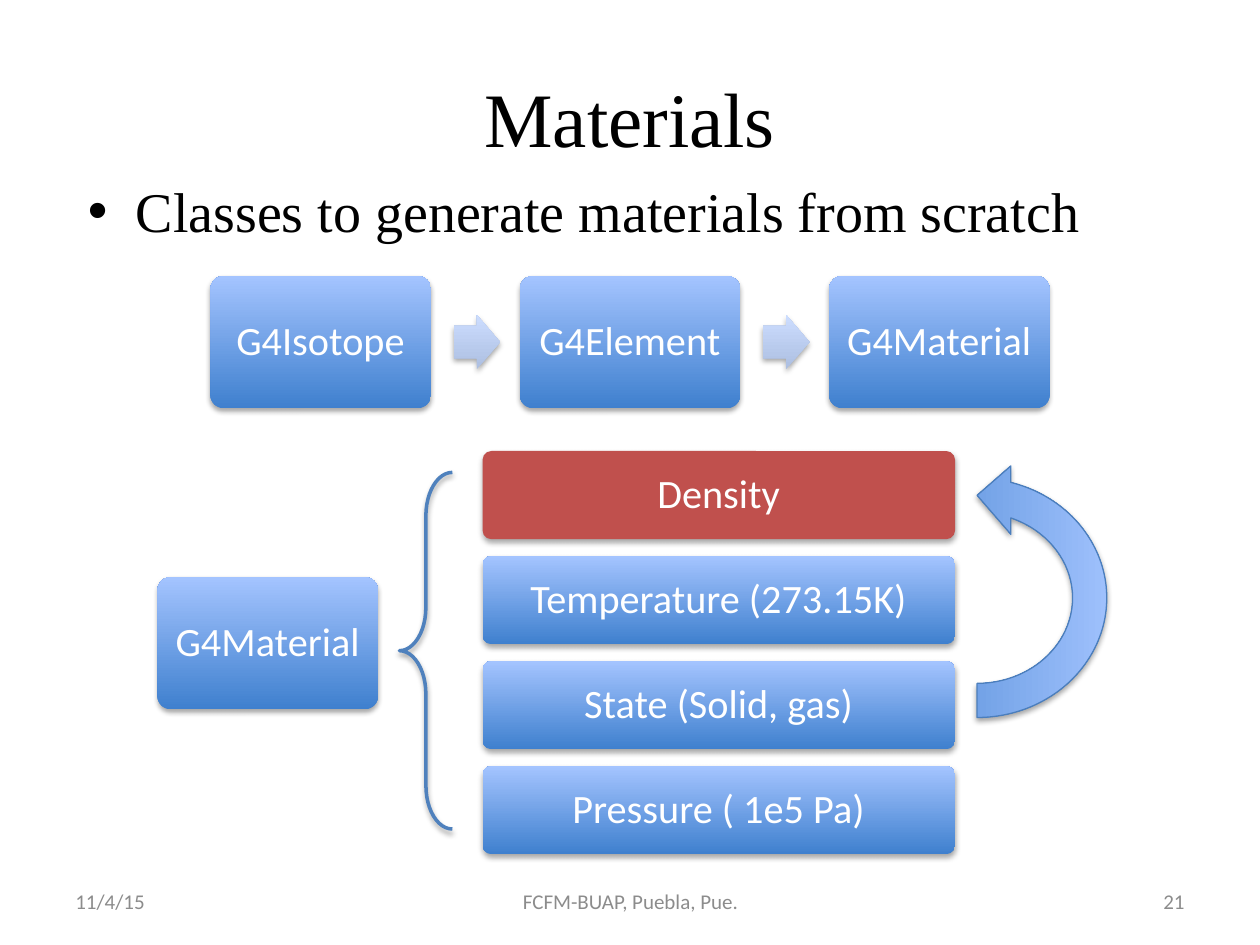
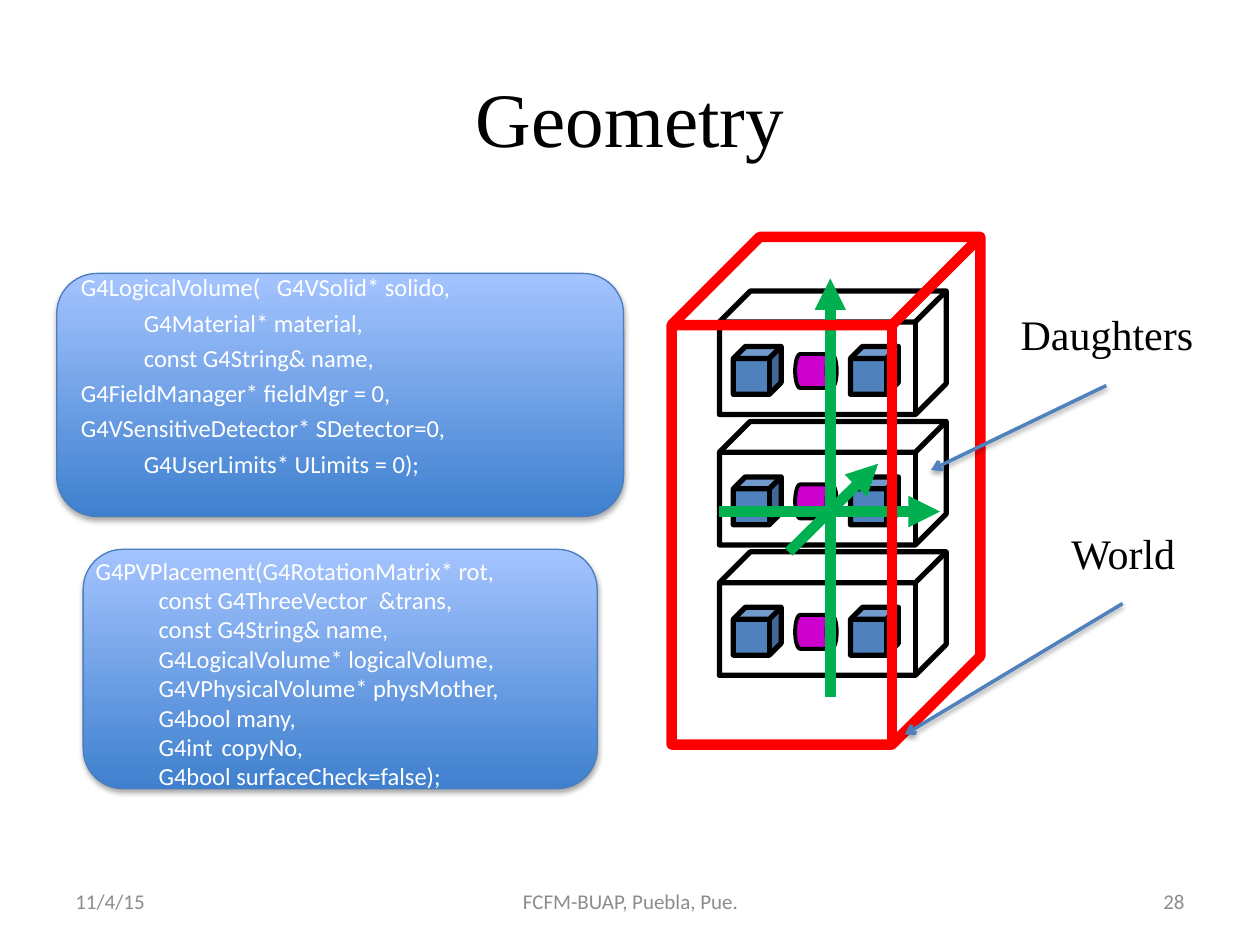
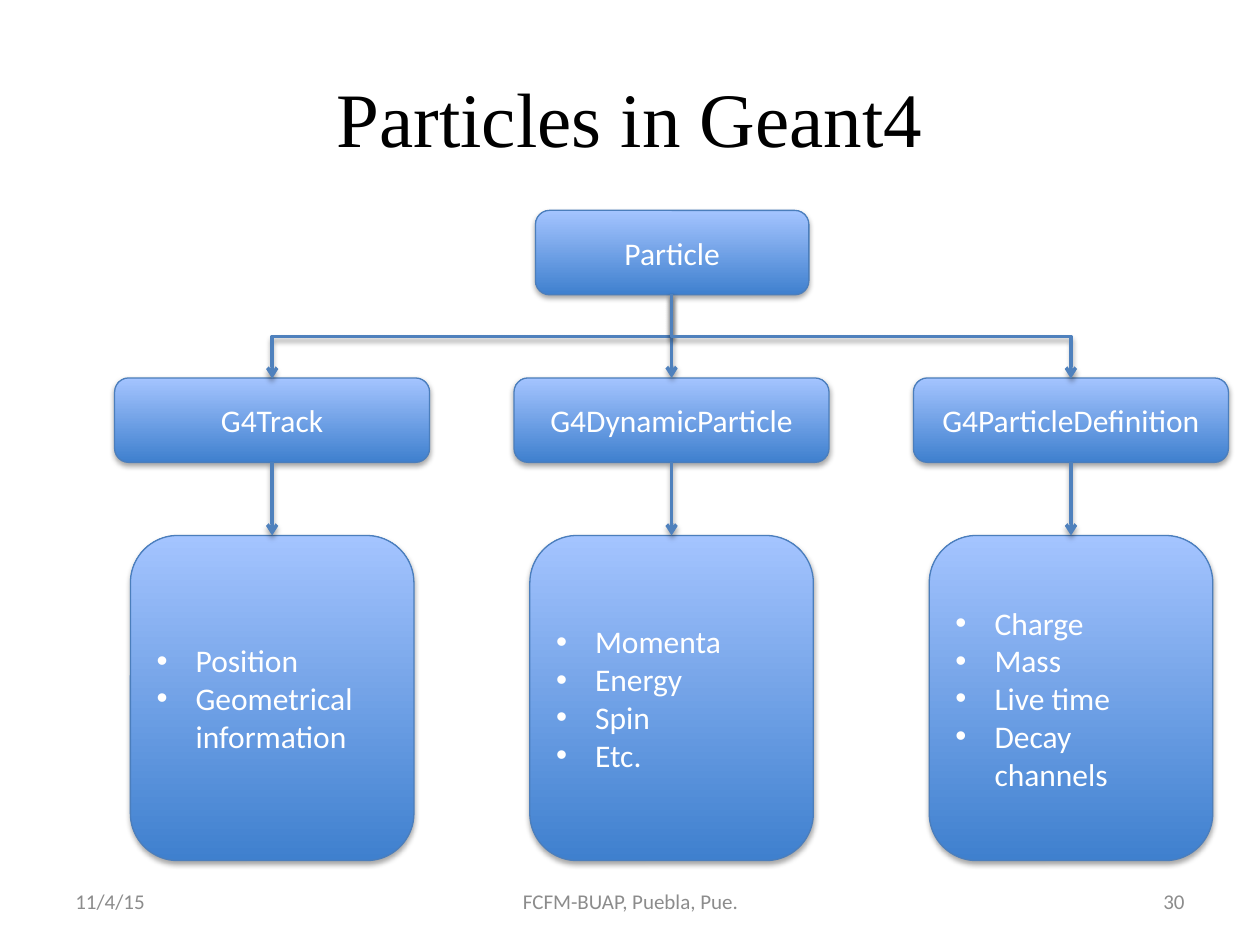
"""Build three slides on Geant4 materials, geometry and particles."""
from lxml import etree
from pptx import Presentation, util as u
from pptx.dml.color import RGBColor
from pptx.enum import shapes, text
from pptx.oxml import parse_xml
from pptx.oxml.ns import nsdecls, qn

C = {"deep": "3F80CE", "sky": "A4C4FF", "mist_deep": "ADBFE1", "mist": "CCDDFF",
     "edge": "4B7EBC", "blue": "4F81BD", "red": "C0504D", "world": "FF0000",
     "axis": "00B050", "can": "CC00CC", "black": "000000", "white": "FFFFFF",
     "grey": "8C8C8C"}
SERIF, SANS = "Times New Roman", "Calibri"
BLUE, MIST = ("deep", "sky"), ("mist_deep", "mist")
G, A, V = shapes.MSO_SHAPE, text.PP_ALIGN, text.MSO_ANCHOR
LINK = shapes.MSO_CONNECTOR
SHADOW = ('<a:effectLst %s><a:outerShdw blurRad="39400" dist="22900" dir="5400000" rotWithShape="0">'
          '<a:srgbClr val="000000"><a:alpha val="35000"/></a:srgbClr></a:outerShdw></a:effectLst>'
          % nsdecls("a"))
PLAIN = "<a:effectLst %s/>" % nsdecls("a")


def add(s, kind, box, fill=None, line=None, width=0.75, shadow=False, adj=(), rows=(), size=18,
        font=SANS, color="white", align=A.CENTER, anchor=V.MIDDLE, spacing=None, indent=0):
    """Add a preset shape, or a text box when kind is None, with its paragraphs."""
    box = [u.Inches(v) for v in box]
    if kind is None:
        sp = s.shapes.add_textbox(*box)
    else:
        sp = s.shapes.add_shape(kind, *box)
        for i, value in enumerate(adj):
            sp.adjustments[i] = value
        if isinstance(fill, tuple):
            sp.fill.gradient()
            sp.fill.gradient_angle = 90
            for stop, name in zip(sp.fill.gradient_stops, fill):
                stop.color.rgb = RGBColor.from_string(C[name])
        elif fill:
            sp.fill.solid()
            sp.fill.fore_color.rgb = RGBColor.from_string(C[fill])
        else:
            sp.fill.background()
        if line:
            sp.line.color.rgb = RGBColor.from_string(C[line])
            sp.line.width = u.Pt(width)
        else:
            sp.line.fill.background()
        sp._element.spPr.append(parse_xml(SHADOW if shadow else PLAIN))
    tf = sp.text_frame
    tf.word_wrap = True
    tf.vertical_anchor = anchor
    for i, row in enumerate(rows):
        p = tf.paragraphs[0] if i == 0 else tf.add_paragraph()
        if indent:
            pPr = p._p.get_or_add_pPr()
            pPr.set("marL", str(u.Inches(indent)))
            pPr.set("indent", str(-u.Inches(indent)))
            etree.SubElement(pPr, qn("a:buFont")).set("typeface", "Arial")
            etree.SubElement(pPr, qn("a:buChar")).set("char", "•")
        p.alignment = align
        if spacing:
            p.line_spacing = spacing
        r = p.add_run()
        r.text = row
        r.font.name, r.font.size = font, u.Pt(size)
        r.font.color.rgb = RGBColor.from_string(C[color])
    return sp


def arrow(s, ends, color="blue", width=2, head="arrow", kind=LINK.STRAIGHT, rot=0):
    """Add a connector with an arrowhead at its end."""
    cx = s.shapes.add_connector(kind, *[u.Inches(v) for v in ends])
    cx.line.color.rgb = RGBColor.from_string(C[color])
    cx.line.width = u.Pt(width)
    spPr = cx._element.spPr
    etree.SubElement(spPr.find(qn("a:ln")), qn("a:tailEnd")).set("type", head)
    spPr.append(parse_xml(SHADOW if color == "blue" else PLAIN))
    if rot:
        spPr.find(qn("a:xfrm")).set("rot", str(rot * 60000))


prs = Presentation()
prs.slide_width, prs.slide_height = u.Inches(10), u.Inches(7.5)
slides = []
for title, number in (("Materials", "21"), ("Geometry", "28"), ("Particles in Geant4", "30")):
    s = prs.slides.add_slide(prs.slide_layouts[5])
    sp = s.shapes.title
    sp.left, sp.top, sp.width, sp.height = [u.Inches(v) for v in (0.5, 0.3, 9, 1.25)]
    tf = sp.text_frame
    tf.vertical_anchor = V.MIDDLE
    p = tf.paragraphs[0]
    p.alignment = A.CENTER
    r = p.add_run()
    r.text = title
    r.font.name, r.font.size = SERIF, u.Pt(44)
    r.font.color.rgb = RGBColor.from_string(C["black"])
    for x, w, label, align in ((0.5, 2.33, "11/4/15", A.LEFT),
                               (3.42, 3.17, "FCFM-BUAP, Puebla, Pue.", A.CENTER),
                               (7.17, 2.33, number, A.RIGHT)):
        add(s, None, (x, 6.95, w, 0.4), rows=[label], size=12, color="grey", align=align)
    slides.append(s)
materials, geometry, particles = slides

s = materials
add(s, None, (0.6, 1.35, 9, 0.65), rows=["Classes to generate materials from scratch"], size=32,
    font=SERIF, color="black", align=A.LEFT, anchor=V.TOP, indent=0.38)
block = dict(shadow=True, adj=[0.1], size=23, spacing=0.9)
STEP = 2.455
for i, name in enumerate(("G4Isotope", "G4Element", "G4Material")):
    x = 1.67 + i * STEP
    add(s, G.ROUNDED_RECTANGLE, (x, 2.19, 1.75, 1.05), BLUE, rows=[name], **block)
    if i < 2:
        add(s, G.RIGHT_ARROW, (x + 1.93, 2.5, 0.37, 0.43), MIST, shadow=True, adj=(0.6, 0.5))
add(s, G.ROUNDED_RECTANGLE, (1.25, 4.58, 1.75, 1.05), BLUE, rows=["G4Material"], **block)
properties = ("Density", "Temperature (273.15K)", "State (Solid, gas)", "Pressure ( 1e5 Pa)")
for i, name in enumerate(properties):
    add(s, G.ROUNDED_RECTANGLE, (3.83, 3.58 + i * 2.5 / 3, 3.75, 0.7), BLUE if i else "red",
        rows=[name], **block)
sp = add(s, G.CIRCULAR_ARROW, (6.67, 3.58, 2.17, 2.33), BLUE, "edge", shadow=True)
sp.rotation = 90
sp._element.spPr.find(qn("a:xfrm")).set("flipH", "1")
add(s, G.LEFT_BRACE, (3.17, 3.75, 0.42, 2.83), line="blue", width=2, shadow=True, adj=(0.82, 0.5))

s = geometry
panel = dict(fill=BLUE, line="edge", shadow=True)
sp = add(s, G.ROUNDED_RECTANGLE, (0.45, 2.17, 4.5, 1.93), size=14, align=A.LEFT, spacing=1.2, rows=[
    "G4LogicalVolume(   G4VSolid* solido,",
    "\tG4Material* material,",
    "\tconst G4String& name, \t\t\tG4FieldManager* fieldMgr = 0, \t\tG4VSensitiveDetector* SDetector=0,",
    "\tG4UserLimits* ULimits = 0);"], **panel)
sp.text_frame.margin_bottom = u.Inches(0.41)
add(s, G.ROUNDED_RECTANGLE, (0.66, 4.36, 4.08, 1.9), **panel)
add(s, None, (0.66, 4.36, 4.08, 1.99), size=14, align=A.LEFT, anchor=V.TOP, rows=[
    "G4PVPlacement(G4RotationMatrix* rot,",
    "\tconst G4ThreeVector  &trans,",
    "\tconst G4String& name,",
    "\tG4LogicalVolume* logicalVolume,",
    "\tG4VPhysicalVolume* physMother,",
    "\tG4bool many,",
    "\tG4int\tcopyNo,",
    "\tG4bool surfaceCheck=false);"])
for row in (2, 0, 1):
    y = 2.31 + row * 1.035
    add(s, G.CUBE, (5.82, y + 0.44, 0.38, 0.38), "blue", "black", 3)
    add(s, G.CUBE, (5.71, y, 1.8, 0.98), None, "black", 3)
    add(s, G.CAN, (6.34, y + 0.47, 0.27, 0.33), "can", "black", 2.25, adj=[0.3]).rotation = 90
    add(s, G.CUBE, (6.75, y + 0.44, 0.38, 0.38), "blue", "black", 3)
for ends in ((5.71, 4.06, 7.46, 4.06), (6.26, 4.38, 6.97, 3.68), (6.59, 5.53, 6.59, 2.21)):
    arrow(s, ends, "axis", 6, "triangle")
add(s, G.CUBE, (5.33, 1.88, 2.45, 4.03), None, "world", 6, adj=[0.286])
for name, x, y, ends in (("World", 8.04, 3.98, (8.91, 4.79, 7.18, 5.83)),
                         ("Daughters", 7.91, 2.24, (8.78, 3.06, 7.39, 3.73))):
    add(s, None, (x, y, 1.75, 0.82), rows=[name], size=24, font=SERIF, color="black")
    arrow(s, ends)

s = particles
MID, PITCH, DROP = 5.33, 3.17, 0.67
add(s, G.ROUNDED_RECTANGLE, (MID - 1.08, 1.67, 2.17, DROP), rows=["Particle"], **panel)
branches = (("G4Track", ["Position", "Geometrical information"]),
            ("G4DynamicParticle", ["Momenta", "Energy", "Spin", "Etc."]),
            ("G4ParticleDefinition", ["Charge", "Mass", "Live time", "Decay channels"]))
for i, (name, details) in enumerate(branches):
    side = i - 1
    x = MID + side * PITCH
    add(s, G.ROUNDED_RECTANGLE, (x - 1.25, 3, 2.5, DROP), rows=[name], **panel)
    add(s, G.ROUNDED_RECTANGLE, (x - 1.125, 4.25, 2.25, 2.58), rows=details, align=A.LEFT,
        indent=0.31, **panel)
    if side:
        cx, half = (MID + x) / 2, side * DROP / 2
        arrow(s, (cx + half, 2.67 - PITCH / 2, cx - half, 2.67 + PITCH / 2), kind=LINK.ELBOW,
              rot=270 if side > 0 else 90)
    else:
        arrow(s, (x, 2.33, x, 3))
    arrow(s, (x, 3.67, x, 4.25))

prs.save("out.pptx")
